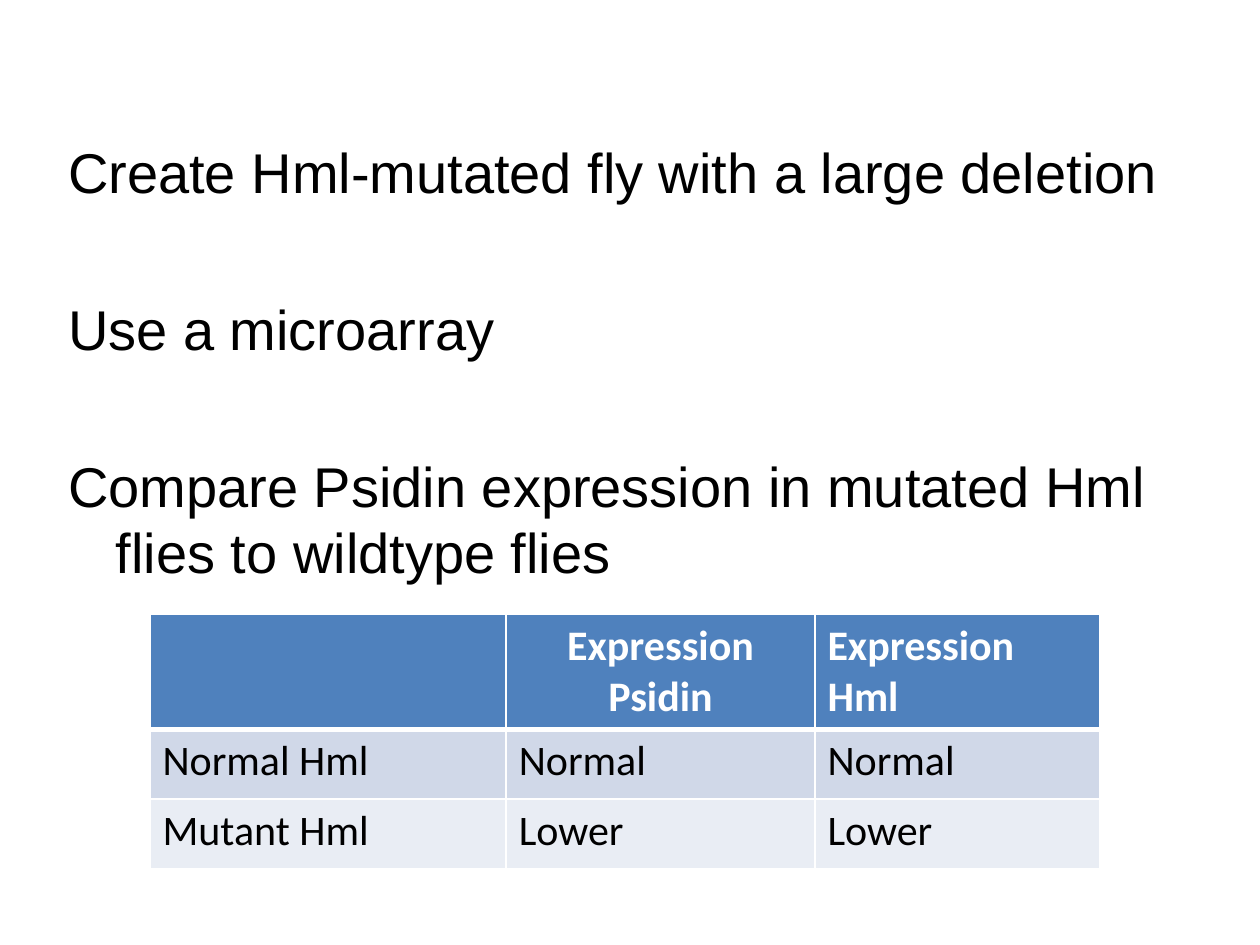
from lxml import etree
from pptx import Presentation
from pptx import util as u
from pptx.dml.color import RGBColor
from pptx.enum import text
from pptx.oxml.ns import qn

COLORS = {"ink": "000000", "paper": "FFFFFF", "header": "4F81BD",
          "band_dark": "D0D8E8", "band_light": "E9EDF4"}
STEPS = ["Create Hml-mutated fly with a large deletion",
         "Use a microarray",
         "Compare Psidin expression in mutated Hml flies to wildtype flies"]
ROWS = [["", "Expression Psidin", "Expression Hml"],
        ["Normal Hml", "Normal", "Normal"],
        ["Mutant Hml", "Lower", "Lower"]]
ROW_FILLS = ["header", "band_dark", "band_light"]
COLUMN_SHARES = [0.375, 0.325, 0.3]
ROW_SHARES = [0.45, 0.275, 0.275]


def format_font(font, name, size, color, bold=False):
    """Set the typeface, size, colour and weight of a font."""
    font.name, font.size, font.bold = name, u.Pt(size), bold
    font.color.rgb = RGBColor.from_string(COLORS[color])


def share_box(presentation, left, top, width, height):
    """Turn shares of the slide's size into a box of lengths."""
    across, down = presentation.slide_width, presentation.slide_height
    return int(left * across), int(top * down), int(width * across), int(height * down)


def add_steps(slide, box):
    """Fill the body placeholder with unbulleted, hanging steps."""
    body = slide.placeholders[1]
    body.left, body.top, body.width, body.height = box
    frame = body.text_frame
    frame.text = "\n".join(STEPS)
    frame.auto_size = text.MSO_AUTO_SIZE.NONE
    frame.vertical_anchor = text.MSO_ANCHOR.TOP
    for index, paragraph in enumerate(frame.paragraphs):
        paragraph.line_spacing = u.Pt(38)
        paragraph.space_before = u.Pt(51.5 if index else 0)
        format_font(paragraph.font, "Arial", 32, "ink")
        properties = paragraph._p.get_or_add_pPr()
        properties.set("marL", str(u.Inches(0.38)))
        properties.set("indent", str(-u.Inches(0.38)))
        bullet_off = etree.Element(qn("a:buNone"))
        properties.insert_element_before(bullet_off, "a:tabLst", "a:defRPr", "a:extLst")


def add_borders(cell, top, bottom):
    """Draw white borders of the given widths above and below a cell."""
    properties = cell._tc.get_or_add_tcPr()
    widths = {"lnL": 1, "lnR": 1, "lnT": top, "lnB": bottom}
    for position, (side, width) in enumerate(widths.items()):
        line = etree.Element(qn(f"a:{side}"), w=str(u.Pt(width)))
        fill = etree.SubElement(line, qn("a:solidFill"))
        etree.SubElement(fill, qn("a:srgbClr"), val=COLORS["paper"])
        properties.insert(position, line)


def add_expression_table(slide, box):
    """Place the expression table in its box."""
    table = slide.shapes.add_table(len(ROWS), len(COLUMN_SHARES), *box).table
    for column, share in zip(table.columns, COLUMN_SHARES):
        column.width = int(box[2] * share)
    for row, share in zip(table.rows, ROW_SHARES):
        row.height = int(box[3] * share)
    for row_index, labels in enumerate(ROWS):
        is_header = row_index == 0
        for column_index, label in enumerate(labels):
            cell = table.cell(row_index, column_index)
            cell.text = label
            cell.fill.solid()
            cell.fill.fore_color.rgb = RGBColor.from_string(COLORS[ROW_FILLS[row_index]])
            paragraph = cell.text_frame.paragraphs[0]
            format_font(paragraph.font, "Calibri", 24,
                        "paper" if is_header else "ink", is_header)
            add_borders(cell, 3 if row_index == 1 else 1, 3 if is_header else 1)
    table.cell(0, 1).text_frame.paragraphs[0].alignment = text.PP_ALIGN.CENTER


def main():
    """Build and save the slide."""
    presentation = Presentation()
    presentation.slide_width, presentation.slide_height = u.Inches(10), u.Inches(7.5)
    slide = presentation.slides.add_slide(presentation.slide_layouts[1])
    title = slide.shapes.title._element
    title.getparent().remove(title)
    add_steps(slide, share_box(presentation, 0.044, 0.14, 0.9, 0.48))
    add_expression_table(slide, share_box(presentation, 0.119, 0.65, 0.754, 0.268))
    presentation.save("out.pptx")


if __name__ == "__main__":
    main()
